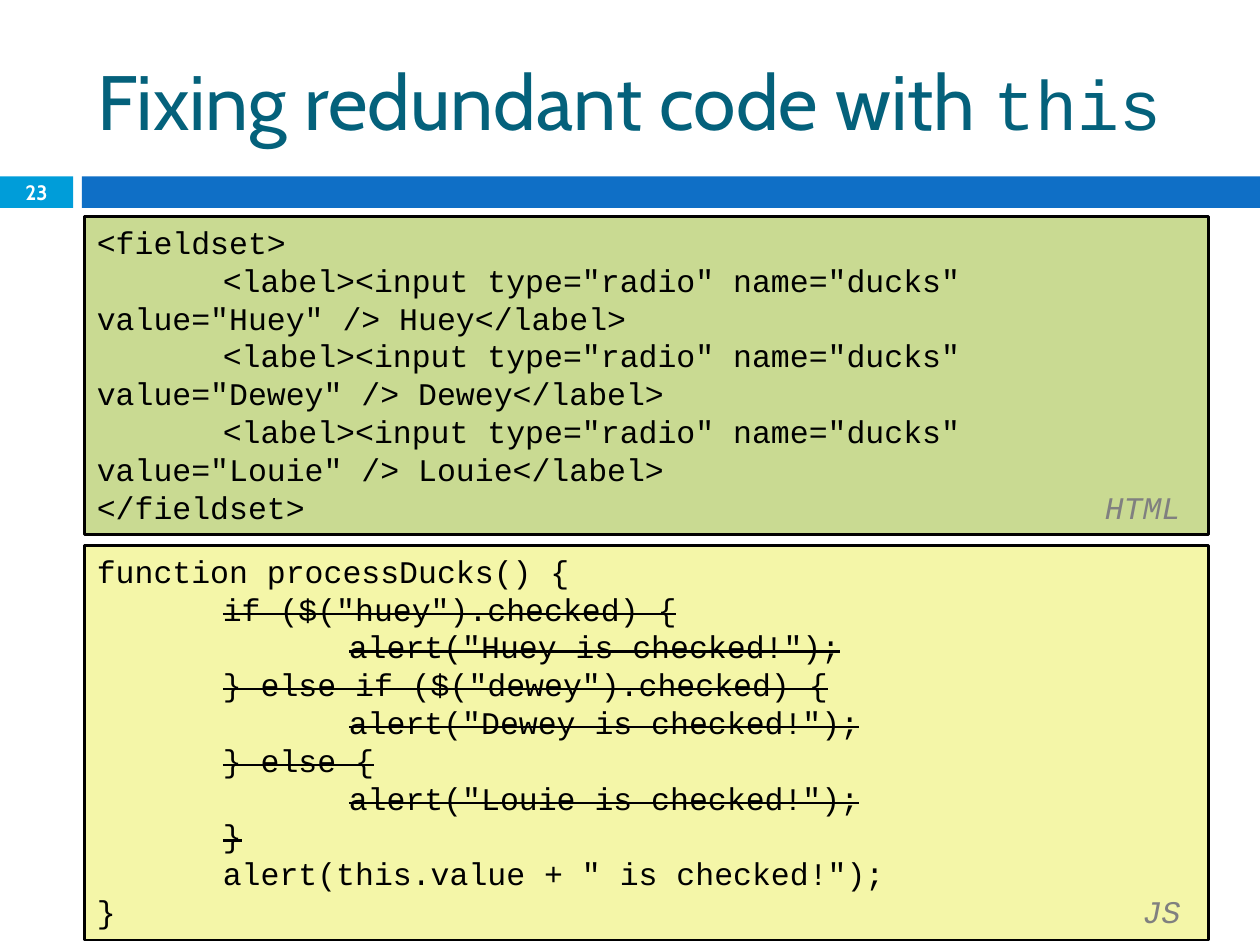
from lxml import etree
from pptx import Presentation
from pptx.dml.color import RGBColor
from pptx.enum.shapes import MSO_SHAPE
from pptx.enum.text import MSO_ANCHOR, MSO_AUTO_SIZE, PP_ALIGN
from pptx.oxml.ns import qn
from pptx.util import Inches, Pt

RECTANGLE = MSO_SHAPE.RECTANGLE
MIDDLE, TOP = MSO_ANCHOR.MIDDLE, MSO_ANCHOR.TOP
LEFT, CENTER = PP_ALIGN.LEFT, PP_ALIGN.CENTER
NO_AUTOFIT = MSO_AUTO_SIZE.NONE

# Content: each code line is (indent level, code, struck out)
TITLE_WORDS, TITLE_CODE = "Fixing redundant code with ", "this"
PAGE_NUMBER = "23"
DUCKS = ["Huey", "Dewey", "Louie"]
HTML_LINES = [
    (0, "<fieldset>", False),
    *[(1, f'<label><input type="radio" name="ducks" value="{duck}" /> {duck}</label>', False)
      for duck in DUCKS],
    (0, "</fieldset>", False),
]
JS_LINES = [
    (0, "function processDucks() {", False),
    (1, 'if ($("huey").checked) {', True),
    (2, 'alert("Huey is checked!");', True),
    (1, '} else if ($("dewey").checked) {', True),
    (2, 'alert("Dewey is checked!");', True),
    (1, "} else {", True),
    (2, 'alert("Louie is checked!");', True),
    (1, "}", True),
    (1, 'alert(this.value + " is checked!");', False),
    (0, "}", False),
]

THEME = {
    "body_font": "Cabin", "code_font": "Courier New",
    "title": "04617B", "number_block": "009DD9", "band": "0F6FC6",
    "white": "FFFFFF", "ink": "000000", "tag": "808080",
    "html": "C9DA92", "js": "F4F6A8",
    "title_size": 44, "title_code_size": 40, "code_size": 18, "number_size": 11.9,
}

# Layout in inches
SLIDE_WIDTH, SLIDE_HEIGHT = 10, 7.5
BAND_TOP, BAND_HEIGHT = 1.4, 0.25
NUMBER_WIDTH, BAND_LEFT = 0.58, 0.65
CONTENT_LEFT, CONTENT_WIDTH = 0.67, 8.92
INDENT_TAB, TAG_TAB = 1, 8.6

# (language, lines, fill, top, height)
CODE_BOXES = [
    ("JS", JS_LINES, THEME["js"], 4.33, 3.13),
    ("HTML", HTML_LINES, THEME["html"], 1.72, 2.52),
]


def add_span(para, text, font, size, color, bold=False, italic=False, struck=False):
    span = para.add_run()
    span.text = text
    span.font.name = font
    span.font.size = Pt(size)
    span.font.color.rgb = RGBColor.from_string(color)
    span.font.bold = bold
    span.font.italic = italic
    if struck:
        span.font._element.set("strike", "sngStrike")


def add_code(para, text, color=THEME["ink"], **style):
    add_span(para, text, THEME["code_font"], THEME["code_size"], color, **style)


def add_box(page, left, top, width, height, fill, outlined=False):
    box = page.shapes.add_shape(
        RECTANGLE, Inches(left), Inches(top), Inches(width), Inches(height))
    box.shadow.inherit = False
    box.fill.solid()
    box.fill.fore_color.rgb = RGBColor.from_string(fill)
    if outlined:
        box.line.color.rgb = RGBColor.from_string(THEME["ink"])
        box.line.width = Pt(1.5)
    else:
        box.line.fill.background()
    return box


def add_tab(para, position, alignment):
    tabs = etree.SubElement(para._p.get_or_add_pPr(), qn("a:tabLst"))
    etree.SubElement(tabs, qn("a:tab"), pos=str(Inches(position)), algn=alignment)


def add_code_box(page, language, lines, fill, top, height):
    box = add_box(page, CONTENT_LEFT, top, CONTENT_WIDTH, height, fill, outlined=True)
    frame = box.text_frame
    frame.word_wrap = True
    frame.vertical_anchor = TOP
    for index, (level, code, struck) in enumerate(lines):
        para = frame.add_paragraph() if index else frame.paragraphs[0]
        para.alignment = LEFT
        para._p.get_or_add_pPr().set("defTabSz", str(Inches(INDENT_TAB)))
        if level:
            add_tab(para, level * INDENT_TAB, "l")
            add_code(para, "\t")
        add_code(para, code, struck=struck)
    # Language tag at the right end of the last line
    add_tab(para, TAG_TAB, "r")
    add_code(para, "\t")
    add_code(para, language, THEME["tag"], italic=True)


def main():
    deck = Presentation()
    deck.slide_width, deck.slide_height = Inches(SLIDE_WIDTH), Inches(SLIDE_HEIGHT)
    page = deck.slides.add_slide(deck.slide_layouts[5])

    # Title
    title = page.shapes.title
    title.left, title.top = Inches(CONTENT_LEFT), Inches(0.25)
    title.width, title.height = Inches(CONTENT_WIDTH), Inches(1.08)
    frame = title.text_frame
    frame.auto_size = NO_AUTOFIT
    frame.vertical_anchor = MIDDLE
    para = frame.paragraphs[0]
    para.alignment = LEFT
    add_span(para, TITLE_WORDS, THEME["body_font"], THEME["title_size"], THEME["title"])
    add_span(para, TITLE_CODE, THEME["code_font"], THEME["title_code_size"], THEME["title"])

    # Band with the page number
    number = add_box(page, 0, BAND_TOP, NUMBER_WIDTH, BAND_HEIGHT, THEME["number_block"])
    add_box(page, BAND_LEFT, BAND_TOP, SLIDE_WIDTH - BAND_LEFT, BAND_HEIGHT, THEME["band"])
    frame = number.text_frame
    frame.margin_top = frame.margin_bottom = 0
    frame.vertical_anchor = MIDDLE
    para = frame.paragraphs[0]
    para.alignment = CENTER
    add_span(para, PAGE_NUMBER, THEME["body_font"], THEME["number_size"],
             THEME["white"], bold=True)

    # Code listings
    for code_box in CODE_BOXES:
        add_code_box(page, *code_box)

    deck.save("out.pptx")


if __name__ == "__main__":
    main()
